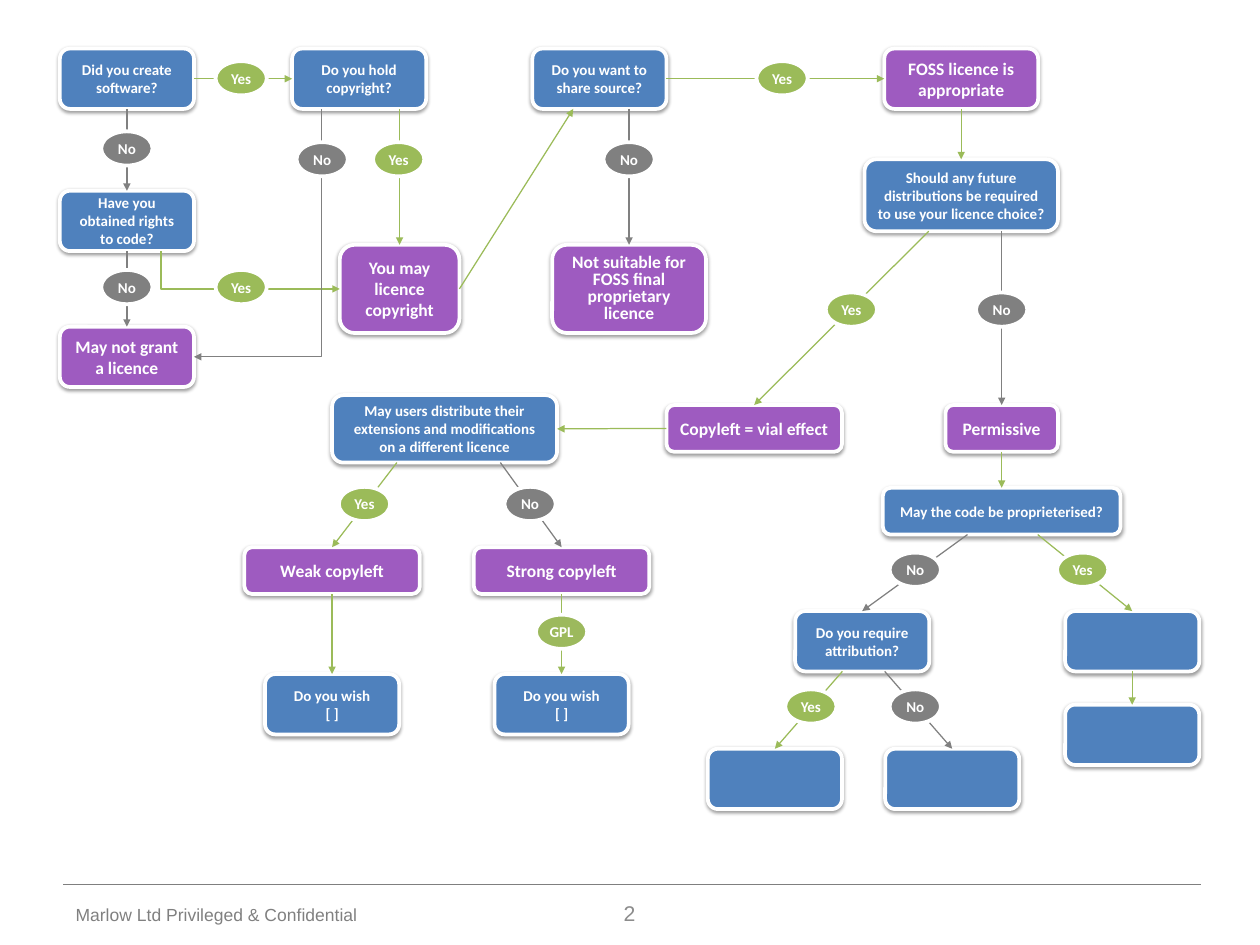
import pptx
import pptx.util
import pptx.dml.color
import pptx.enum.shapes
import pptx.enum.text
import pptx.oxml
import pptx.oxml.ns

COLORS = {"question": "4F81BD", "outcome": "9E5BC0", "Yes": "9BBB59", "No": "808080",
          "GPL": "9CB95D", "white": "FFFFFF", "rule": "7F7F7F", "footer": "808080",
          "number": "8C8C8C"}
NS = pptx.oxml.ns.nsdecls("a")
MSO = pptx.enum.shapes.MSO_SHAPE
CONN = pptx.enum.shapes.MSO_CONNECTOR
CENTER = pptx.enum.text.PP_ALIGN.CENTER
MIDDLE = pptx.enum.text.MSO_ANCHOR.MIDDLE

prs = pptx.Presentation()
prs.slide_width, prs.slide_height = pptx.util.Inches(14), pptx.util.Inches(10.5)
s = prs.slides.add_slide(prs.slide_layouts[6])
UNIT = prs.slide_width / 14  # the grid has 14 columns and 10.5 rows


def grid(*cells):
    return [round(c * UNIT) for c in cells]


def write(sp, text, size, color, font="Calibri", bold=True, align=CENTER):
    tf = sp.text_frame
    tf.word_wrap = True
    tf.vertical_anchor = MIDDLE
    p = tf.paragraphs[0]
    p.text = text
    p.alignment = align
    for r in p.runs:
        r.font.name, r.font.size, r.font.bold = font, pptx.util.Pt(size), bold
        r.font.color.rgb = pptx.dml.color.RGBColor.from_string(COLORS[color])


# Boxes: kind, centre column, top row, width, height, text
SMALL = (1.49, 0.67)
WIDE = (1.95, 0.52)
TOP, CHOICE, RIGHTS, LICENCE, REFUSED = 0.54, 1.77, 2.12, 2.72, 3.63
TYPE, PROPRIETARY, STRENGTH, ATTRIBUTION, WISH = 4.5, 5.42, 6.08, 6.79, 7.49
boxes = {
    "created": ("question", 1.41, TOP, *SMALL, "Did you create software?"),
    "hold": ("question", 3.99, TOP, *SMALL, "Do you hold copyright?"),
    "share": ("question", 6.66, TOP, *SMALL, "Do you want to share source?"),
    "foss": ("outcome", 10.68, TOP, 1.71, 0.67, "FOSS licence is appropriate"),
    "rights": ("question", 1.41, RIGHTS, *SMALL, "Have you obtained rights to code?"),
    "refused": ("outcome", 1.41, REFUSED, *SMALL, "May not grant a licence"),
    "licence": ("outcome", 4.44, LICENCE, 1.33, 0.98, "You may licence copyright"),
    "unsuitable": ("outcome", 6.99, LICENCE, 1.71, 0.98,
                   "Not suitable for FOSS final proprietary licence"),
    "choice": ("question", 10.68, CHOICE, 2.15, 0.8,
               "Should any future distributions be required to use your licence choice?"),
    "users": ("question", 4.94, 4.39, 2.5, 0.75,
              "May users distribute their extensions and modifications on a different licence"),
    "copyleft": ("outcome", 8.38, TYPE, *WIDE, "Copyleft = vial effect"),
    "permissive": ("outcome", 11.13, TYPE, 1.25, 0.52, "Permissive"),
    "proprietary": ("question", 11.13, PROPRIETARY, 2.64, 0.52,
                    "May the code be proprieterised?"),
    "weak": ("outcome", 3.69, STRENGTH, *WIDE, "Weak copyleft"),
    "strong": ("outcome", 6.24, STRENGTH, *WIDE, "Strong copyleft"),
    "weak wish": ("question", 3.69, WISH, *SMALL, "Do you wish\v[ ]"),
    "strong wish": ("question", 6.24, WISH, *SMALL, "Do you wish\v[ ]"),
    "attribution": ("question", 9.58, ATTRIBUTION, *SMALL, "Do you require attribution?"),
    "closed": ("question", 12.58, ATTRIBUTION, *SMALL, ""),
    "closed end": ("question", 12.58, 7.83, *SMALL, ""),
    "credited": ("question", 8.61, 8.32, *SMALL, ""),
    "uncredited": ("question", 10.58, 8.32, *SMALL, ""),
}
shapes = {}
for name, (kind, x, y, w, h, text) in boxes.items():
    sp = s.shapes.add_shape(MSO.FLOWCHART_ALTERNATE_PROCESS, *grid(x - w / 2, y, w, h))
    sp.fill.solid()
    sp.fill.fore_color.rgb = pptx.dml.color.RGBColor.from_string(COLORS[kind])
    sp.line.color.rgb = pptx.dml.color.RGBColor.from_string(COLORS["white"])
    sp.line.width = pptx.util.Pt(3)
    sp.shadow.inherit = False
    sp._element.spPr.find(pptx.oxml.ns.qn("a:effectLst")).append(pptx.oxml.parse_xml(
        f'<a:outerShdw {NS} blurRad="39400" dist="20300" dir="5400000" rotWithShape="0">'
        '<a:srgbClr val="000000"><a:alpha val="38000"/></a:srgbClr></a:outerShdw>'))
    if text:
        write(sp, text, 14 if kind == "outcome" else 12, "white")
    shapes[name] = sp
shapes["unsuitable"].text_frame.paragraphs[0].line_spacing = 0.8

# Arrows: answer, from box, side, shift along the side, to box, side, shift
SITES = {"top": 0, "left": 1, "bottom": 2, "right": 3}
arrows = [
    ("Yes", "created", "right", 0, "hold", "left", 0),
    ("No", "created", "bottom", 0, "rights", "top", 0),
    ("No", "rights", "bottom", 0, "refused", "top", 0),
    ("Yes", "rights", "bottom", 0.38, "licence", "left", 0),
    ("No", "hold", "bottom", -0.42, "refused", "right", 0),
    ("Yes", "hold", "bottom", 0.45, "licence", "top", 0),
    ("Yes", "licence", "right", 0, "share", "bottom", -0.29),
    ("No", "share", "bottom", 0.33, "unsuitable", "top", 0),
    ("Yes", "share", "right", 0, "foss", "left", 0),
    ("Yes", "foss", "bottom", 0, "choice", "top", 0),
    ("Yes", "choice", "bottom", -0.36, "copyleft", "top", 0),
    ("No", "choice", "bottom", 0.45, "permissive", "top", 0),
    ("Yes", "copyleft", "left", 0, "users", "right", 0),
    ("Yes", "users", "bottom", -0.53, "weak", "top", 0),
    ("No", "users", "bottom", 0.62, "strong", "top", 0),
    ("Yes", "weak", "bottom", 0, "weak wish", "top", 0),
    ("Yes", "strong", "bottom", 0, "strong wish", "top", 0),
    ("Yes", "permissive", "bottom", 0, "proprietary", "top", 0),
    ("No", "proprietary", "bottom", -0.38, "attribution", "top", 0),
    ("Yes", "proprietary", "bottom", 0.4, "closed", "top", 0),
    ("Yes", "closed", "bottom", 0, "closed end", "top", 0),
    ("Yes", "attribution", "bottom", -0.22, "credited", "top", 0),
    ("No", "attribution", "bottom", 0.25, "uncredited", "top", 0),
]
for answer, *ends in arrows:
    points = []
    for name, side, shift in (ends[:3], ends[3:]):
        _, x, y, w, h, _ = boxes[name]
        points += {"top": (x + shift, y), "bottom": (x + shift, y + h),
                   "left": (x - w / 2, y + h / 2), "right": (x + w / 2, y + h / 2)}[side]
    bent = ends[1] == "bottom" and ends[4] in ("left", "right")
    line = s.shapes.add_connector(CONN.ELBOW if bent else CONN.STRAIGHT, *grid(*points))
    if bent:  # leave the box downwards, then turn once
        geom = line._element.spPr.find(pptx.oxml.ns.qn("a:prstGeom"))
        geom.find(pptx.oxml.ns.qn("a:avLst")).append(
            pptx.oxml.parse_xml(f'<a:gd {NS} name="adj1" fmla="val 0"/>'))
    else:
        if not ends[2]:
            line.begin_connect(shapes[ends[0]], SITES[ends[1]])
        if not ends[5]:
            line.end_connect(shapes[ends[3]], SITES[ends[4]])
    line.line.color.rgb = pptx.dml.color.RGBColor.from_string(COLORS[answer])
    line.line.width = pptx.util.Pt(1)
    line.line._get_or_add_ln().append(pptx.oxml.parse_xml(f'<a:tailEnd {NS} type="triangle"/>'))
    line._element.spPr.append(pptx.oxml.parse_xml(f"<a:effectLst {NS}/>"))

# Answers: text, centre column, centre row
answers = [
    ("Yes", 2.68, 0.87), ("Yes", 8.69, 0.87), ("No", 1.41, 1.65), ("No", 3.58, 1.77),
    ("Yes", 4.43, 1.77), ("No", 6.99, 1.77), ("No", 1.41, 3.19), ("Yes", 2.68, 3.19),
    ("Yes", 9.46, 3.44), ("No", 11.13, 3.44), ("Yes", 4.05, 5.6), ("No", 5.89, 5.6),
    ("GPL", 6.24, 7.02), ("No", 10.17, 6.33), ("Yes", 12.03, 6.33), ("Yes", 9.01, 7.85),
    ("No", 10.17, 7.85),
]
for text, x, y in answers:
    sp = s.shapes.add_shape(MSO.OVAL, *grid(x - 0.285, y - 0.19, 0.57, 0.38))
    sp.shadow.inherit = False
    sp.fill.solid()
    sp.fill.fore_color.rgb = pptx.dml.color.RGBColor.from_string(COLORS[text])
    sp.line.color.rgb = pptx.dml.color.RGBColor.from_string(COLORS["white"])
    sp.line.width = pptx.util.Pt(3)
    write(sp, text, 12, "white")
    tf = sp.text_frame
    tf.word_wrap = False
    tf.margin_left = tf.margin_right = tf.margin_top = tf.margin_bottom = 0

# Footer
rule = s.shapes.add_connector(CONN.STRAIGHT, *grid(0.7, 9.83, 13.34, 9.83))
rule.line.color.rgb = pptx.dml.color.RGBColor.from_string(COLORS["rule"])
rule.line.width = pptx.util.Pt(1)
rule._element.spPr.append(pptx.oxml.parse_xml(f"<a:effectLst {NS}/>"))
for text, size, color, align, cells in [
        ("Marlow Ltd Privileged & Confidential", 14, "footer",
         pptx.enum.text.PP_ALIGN.LEFT, (0.7, 9.97, 3.8, 0.38)),
        ("2", 17, "number", CENTER, (4.78, 9.87, 4.43, 0.56))]:
    sp = s.shapes.add_textbox(*grid(*cells))
    write(sp, text, size, color, "Arial", False, align)
    tf = sp.text_frame
    tf.margin_left, tf.margin_right, tf.margin_top, tf.margin_bottom = grid(0.14, 0.14, 0.07, 0.07)

prs.save("out.pptx")
